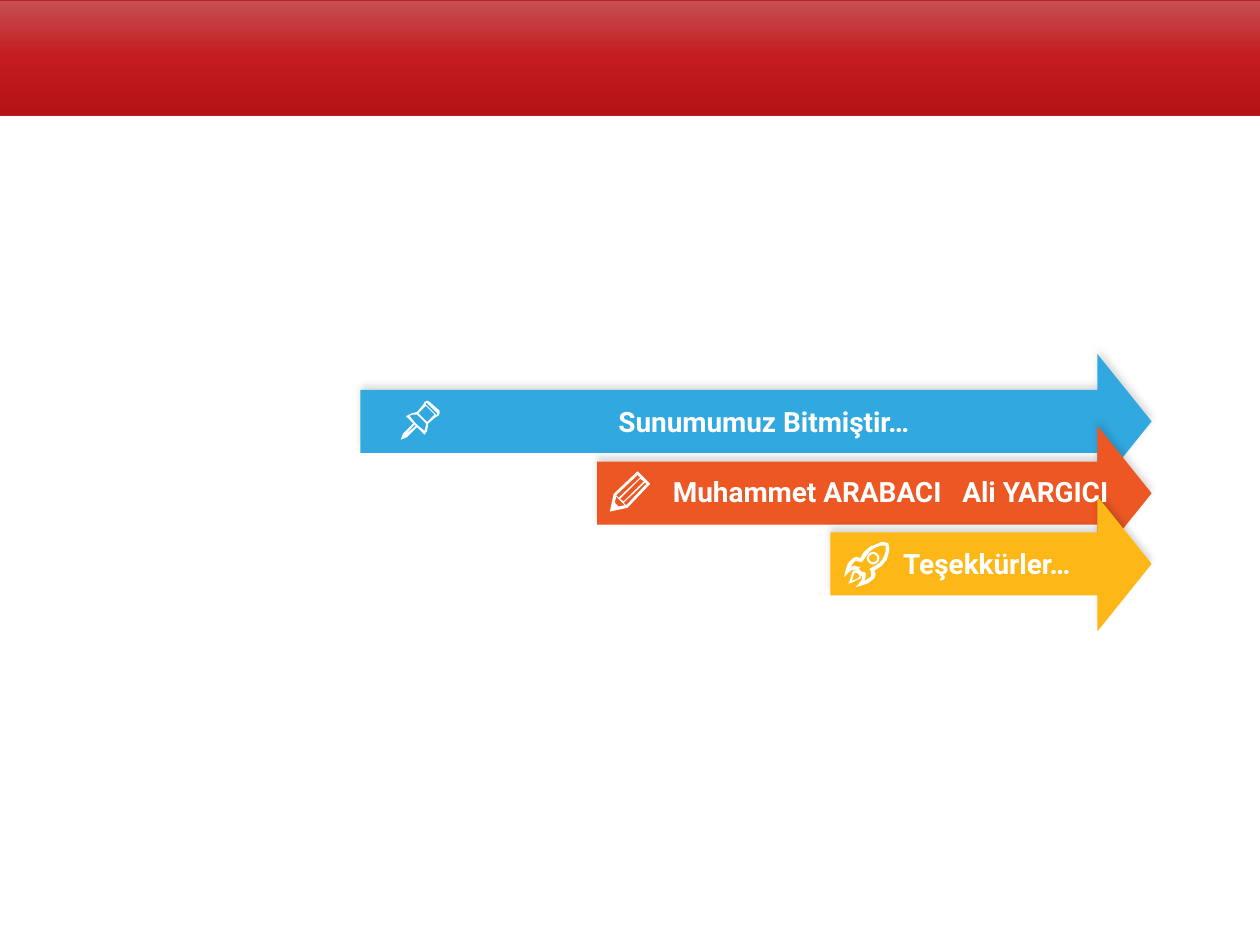
from copy import deepcopy

from lxml.etree import SubElement
from pptx import Presentation
from pptx.dml.color import RGBColor
from pptx.enum.shapes import MSO_SHAPE
from pptx.enum.text import PP_ALIGN
from pptx.oxml.ns import qn
from pptx.util import Inches, Pt

ARROW_TIP = 9.14
ARROW_HEIGHT, SHAFT_HEIGHT, HEAD_LENGTH = 1.07, 0.5, 0.43

# Outlines of the icons, in hundredths of an inch from the icon's corner
PIN = [
    [(22, 19), (28, 14), (30, 13), (31, 11), (31, 9), (23, 2), (21, 1), (19, 2), (18, 4), (13, 10),
     (9, 11), (5, 13), (4, 13), (10, 19), (2, 27), (0, 32), (5, 30), (13, 22), (19, 28), (21, 25)],
    [(21, 3), (29, 11), (29, 12), (28, 12), (20, 4), (20, 3)],
    [(21, 18), (14, 11), (20, 5), (27, 12)],
    [(4, 28), (11, 20), (12, 21)],
    [(14, 21), (11, 18), (7, 13), (10, 12), (13, 12), (20, 19), (20, 21), (19, 25)],
]
PENCIL = [
    [(32, 10), (22, 0), (3, 18), (0, 32), (14, 29)],
    [(13, 27), (11, 25), (28, 9), (29, 10)],
    [(7, 28), (4, 25), (5, 20), (7, 22), (11, 26), (12, 27)],
    [(27, 8), (11, 24), (8, 22), (24, 6)],
    [(22, 3), (24, 5), (7, 21), (5, 19)],
]
ROCKET_BODY = [
    [(0, 28), (1, 23), (3, 17), (7, 13), (10, 12), (13, 13), (15, 9), (18, 6), (22, 3), (23, 3),
     (30, 0), (35, 1), (36, 6), (34, 14), (30, 19), (24, 23), (25, 26), (24, 29), (19, 33),
     (13, 35), (9, 36), (12, 33), (14, 30), (14, 27), (13, 28), (12, 26), (9, 24), (9, 22),
     (6, 22.5), (4, 24)],
    [(24, 5), (20, 8), (15, 15), (14, 16), (13, 16), (9, 15), (7, 17), (5, 20), (8, 19), (11, 20),
     (13, 20), (12, 21), (12, 22), (14, 24), (16, 24), (17, 25), (17, 28), (16, 31), (21, 28),
     (21.5, 26), (21, 23), (20, 22), (21, 21), (28, 17), (31, 13), (33, 8), (33, 3), (29, 3)],
]
ROCKET_FLAME = [
    [(3, 33), (4, 32), (7, 23), (10, 22.5), (13, 24), (13.5, 27), (13, 29), (9, 31), (5, 33)],
    [(11, 25), (9.5, 24.5), (8, 25), (6, 31), (10, 29.5), (12, 28), (12, 26.5)],
]


def color(hex_string):
    return RGBColor.from_string(hex_string)


def paint(shape, fill):
    """Give a flat fill without line or shadow."""
    shape.shadow.inherit = False
    shape.fill.solid()
    shape.fill.fore_color.rgb = color(fill)
    shape.line.fill.background()


def cast_shadow_up(shape):
    effects = shape._element.spPr.find(qn("a:effectLst"))
    shadow = SubElement(effects, qn("a:outerShdw"), blurRad=str(Pt(4)), dist=str(Pt(3)),
                        dir="16200000", algn="b", rotWithShape="0")
    black = SubElement(shadow, qn("a:srgbClr"), val="000000")
    SubElement(black, qn("a:alpha"), val="15000")


def add_banner(slide, left, top, width, height):
    banner = slide.shapes.add_shape(MSO_SHAPE.RECTANGLE, Inches(left), Inches(top),
                                    Inches(width), Inches(height))
    banner.shadow.inherit = False
    banner.fill.gradient()
    banner.fill.gradient_angle = 270
    stop_list = banner._element.spPr.find(".//" + qn("a:gsLst"))
    stop_list.insert(1, deepcopy(stop_list[0]))
    shades = [(0, "C65051"), (0.5, "C31B1F"), (1, "B41215")]
    for stop, (position, shade) in zip(banner.fill.gradient_stops, shades):
        stop.position = position
        stop.color.rgb = color(shade)
    banner.line.color.rgb = color("BB2326")
    banner.line.width = Pt(0.5)


def add_arrow(slide, left, top, fill):
    arrow = slide.shapes.add_shape(MSO_SHAPE.RIGHT_ARROW, Inches(left), Inches(top),
                                   Inches(ARROW_TIP - left), Inches(ARROW_HEIGHT))
    arrow.adjustments[0] = SHAFT_HEIGHT / ARROW_HEIGHT
    arrow.adjustments[1] = HEAD_LENGTH / ARROW_HEIGHT
    paint(arrow, fill)
    cast_shadow_up(arrow)


def add_icon(slide, left, top, contours):
    placed = [[(Inches(left + x / 100), Inches(top + y / 100)) for x, y in contour]
              for contour in contours]
    builder = slide.shapes.build_freeform(*placed[0][0])
    for contour in placed:
        builder.move_to(*contour[0])
        builder.add_line_segments(contour[1:], close=True)
    paint(builder.convert_to_shape(), "FFFFFF")


def add_rocket(slide, left, top):
    add_icon(slide, left, top, ROCKET_BODY)
    add_icon(slide, left, top, ROCKET_FLAME)
    window = slide.shapes.add_shape(MSO_SHAPE.DONUT, Inches(left + 0.18), Inches(top + 0.08),
                                    Inches(0.1), Inches(0.1))
    window.adjustments[0] = 0.17
    paint(window, "FFFFFF")


def add_label(slide, left, top, width, text, alignment=PP_ALIGN.LEFT):
    label = slide.shapes.add_textbox(Inches(left), Inches(top), Inches(width), Inches(0.37))
    label.text_frame.word_wrap = True
    paragraph = label.text_frame.paragraphs[0]
    paragraph.text = text
    paragraph.alignment = alignment
    paragraph.font.name = "Roboto"
    paragraph.font.size = Pt(16)
    paragraph.font.bold = True
    paragraph.font.color.rgb = color("FFFFFF")


def main():
    presentation = Presentation()
    presentation.slide_width, presentation.slide_height = Inches(10), Inches(7.5)
    slide = presentation.slides.add_slide(presentation.slide_layouts[6])

    add_arrow(slide, 2.86, 2.81, "31A8DF")
    add_arrow(slide, 4.74, 3.38, "EC5724")
    add_arrow(slide, 6.59, 3.94, "FDB817")

    add_icon(slide, 4.84, 3.74, PENCIL)
    add_icon(slide, 3.18, 3.17, PIN)
    add_rocket(slide, 6.7, 4.3)

    add_label(slide, 4.5, 3.72, 5.14, "Muhammet ARABACI   Ali YARGICI", PP_ALIGN.CENTER)
    add_label(slide, 4.81, 3.16, 3.56, "Sunumumuz Bitmiştir…")
    add_label(slide, 7.07, 4.29, 1.71, "Teşekkürler…")

    add_banner(slide, -0.01, 0, 10.01, 0.92)
    presentation.save("out.pptx")


if __name__ == "__main__":
    main()
